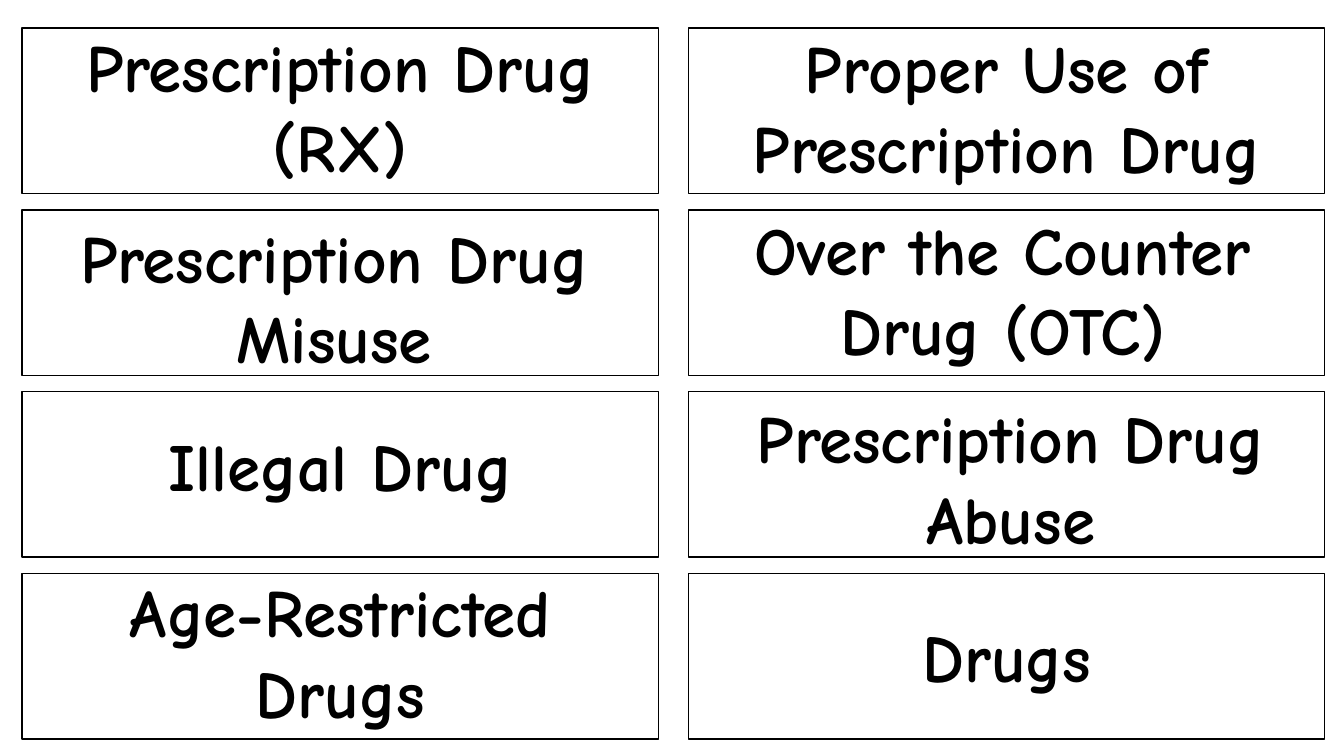
"""Build a slide of eight drug vocabulary cards in a two-by-four grid."""
from pptx import Presentation
from pptx.dml.color import RGBColor
from pptx.enum.shapes import MSO_SHAPE
from pptx.enum.text import MSO_AUTO_SIZE, PP_ALIGN
from pptx.util import Inches, Pt

COLORS = {"card": "FFFFFF", "ink": "000000"}
FONT = "Comic Neue"
LEFT, TOP = 0.22, 0.28
CARD_W, CARD_H = 6.31, 1.64
COL_STEP, ROW_STEP = 6.61, 5.41 / 3
ONE_LINE, TWO_LINES = 0.91, 1.72
NARROW, WIDE = 5.89, 6.15

# term, text offset from the card's corner, text width and height
CARDS = [
    ("Prescription Drug (RX)", 0.21, -0.08, NARROW, TWO_LINES),
    ("Proper Use of Prescription Drug", 0.08, -0.07, WIDE, TWO_LINES),
    ("Prescription Drug Misuse", 0.15, 0.01, NARROW, TWO_LINES),
    ("Over the Counter Drug (OTC)", 0.17, -0.07, NARROW, TWO_LINES),
    ("Illegal Drug", 0.21, 0.27, NARROW, ONE_LINE),
    ("Prescription Drug Abuse", 0.25, 0, NARROW, TWO_LINES),
    ("Age-Restricted Drugs", 0.21, -0.08, NARROW, TWO_LINES),
    ("Drugs", 0.21, 0.37, NARROW, ONE_LINE),
]

prs = Presentation()
prs.slide_width, prs.slide_height = Inches(13.33), Inches(7.5)
s = prs.slides.add_slide(prs.slide_layouts[6])

for i, (term, dx, dy, w, h) in enumerate(CARDS):
    row, col = divmod(i, 2)
    x, y = LEFT + col * COL_STEP, TOP + row * ROW_STEP

    sp = s.shapes.add_shape(MSO_SHAPE.RECTANGLE, Inches(x), Inches(y),
                            Inches(CARD_W), Inches(CARD_H))
    sp.shadow.inherit = False
    sp.fill.solid()
    sp.fill.fore_color.rgb = RGBColor.from_string(COLORS["card"])
    sp.line.color.rgb = RGBColor.from_string(COLORS["ink"])
    sp.line.width = Pt(1)

    tf = s.shapes.add_textbox(Inches(x + dx), Inches(y + dy),
                              Inches(w), Inches(h)).text_frame
    tf.word_wrap = True
    tf.auto_size = MSO_AUTO_SIZE.SHAPE_TO_FIT_TEXT
    p = tf.paragraphs[0]
    p.text = term
    p.alignment = PP_ALIGN.CENTER
    p.font.name, p.font.size, p.font.bold = FONT, Pt(48), True
    p.font.color.rgb = RGBColor.from_string(COLORS["ink"])

prs.save("out.pptx")
